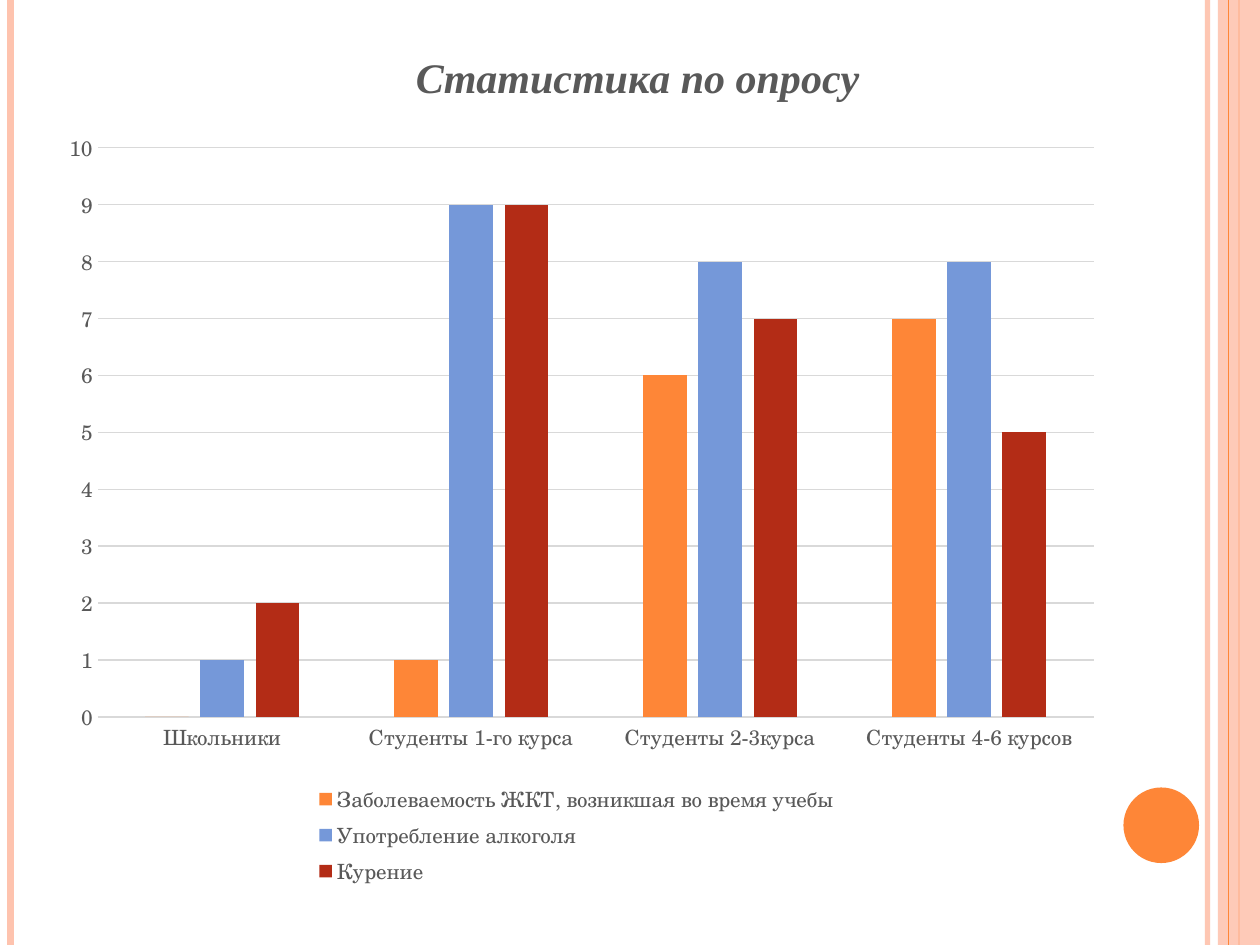
from lxml.etree import SubElement
from pptx import Presentation
from pptx.chart.data import CategoryChartData
from pptx.dml.color import RGBColor
from pptx.enum.chart import XL_CHART_TYPE, XL_LEGEND_POSITION, XL_TICK_MARK
from pptx.enum.shapes import MSO_CONNECTOR, MSO_SHAPE
from pptx.oxml.ns import qn
from pptx.util import Pt

ORANGE = RGBColor(0xFE, 0x86, 0x37)
PEACH = RGBColor(0xFE, 0xC3, 0xAE)
BLUE = RGBColor(0x75, 0x98, 0xD9)
RED = RGBColor(0xB3, 0x2C, 0x16)
GRAY = RGBColor(0x59, 0x59, 0x59)
GRID = RGBColor(0xD9, 0xD9, 0xD9)

WIDTH, HEIGHT = 720, 540
BODY_FONT = "TeX Gyre Schola"
TITLE_FONT = "Times New Roman"

GROUPS = ["Школьники", "Студенты 1-го курса", "Студенты 2-3курса", "Студенты 4-6 курсов"]
SURVEY = [
    ("Заболеваемость ЖКТ, возникшая во время учебы ", (0, 1, 6, 7), ORANGE),
    ("Употребление алкоголя", (1, 9, 8, 8), BLUE),
    ("Курение", (2, 9, 7, 5), RED),
]


def format_font(font, name=BODY_FONT, size=12, color=GRAY, bold=False, italic=False):
    font.name, font.size = name, Pt(size)
    font.bold, font.italic = bold, italic
    font.color.rgb = color


def write_text(frame, text, **font_format):
    run = frame.paragraphs[0].add_run()
    run.text = text
    format_font(run.font, **font_format)


def set_opacity(element, percent):
    color = next(element.iter(qn("a:srgbClr")))
    SubElement(color, qn("a:alpha"), val=str(percent * 1000))


def place_in_chart(parent, index, **fractions):
    """Set a manual layout, as fractions of the chart frame, at a child index."""
    for old in parent.findall(qn("c:layout")):
        parent.remove(old)
    layout = SubElement(parent, qn("c:layout"))
    parent.insert(index, layout)
    manual = SubElement(layout, qn("c:manualLayout"))
    if parent.tag == qn("c:plotArea"):
        SubElement(manual, qn("c:layoutTarget"), val="inner")
    for key in ("x", "y"):
        SubElement(manual, qn(f"c:{key}Mode"), val="edge")
    for key, value in fractions.items():
        SubElement(manual, qn(f"c:{key}"), val=str(value))


class SlideBuilder:
    def __init__(self, slide):
        self.slide = slide

    def stripe(self, x, weight, color, opacity=100):
        line = self.slide.shapes.add_connector(
            MSO_CONNECTOR.STRAIGHT, Pt(x), Pt(0), Pt(x), Pt(HEIGHT))
        line.line.color.rgb = color
        line.line.width = Pt(weight)
        properties = line._element.spPr
        SubElement(properties, qn("a:effectLst"))
        if opacity < 100:
            set_opacity(properties, opacity)

    def block(self, kind, left, top, width, height, color, opacity=100):
        shape = self.slide.shapes.add_shape(kind, Pt(left), Pt(top), Pt(width), Pt(height))
        shape.shadow.inherit = False
        shape.fill.solid()
        shape.fill.fore_color.rgb = color
        shape.line.fill.background()
        if opacity < 100:
            set_opacity(shape._element.spPr, opacity)

    def column_chart(self, left, top, width, height, title, groups, survey):
        data = CategoryChartData()
        data.categories = groups
        for name, values, _ in survey:
            data.add_series(name, values)
        chart = self.slide.shapes.add_chart(
            XL_CHART_TYPE.COLUMN_CLUSTERED, Pt(left), Pt(top), Pt(width), Pt(height), data).chart
        format_font(chart.font)

        # Title
        chart.has_title = True
        write_text(chart.chart_title.text_frame, title,
                   name=TITLE_FONT, size=24, bold=True, italic=True)
        place_in_chart(chart.chart_title._element, 1, x=0.34, y=0.03)

        # Columns
        plot = chart.plots[0]
        plot.gap_width, plot.overlap = 219, -27
        plot.vary_by_categories = False
        for series, (_, _, color) in zip(plot.series, survey):
            series.format.fill.solid()
            series.format.fill.fore_color.rgb = color
            series.invert_if_negative = False
        place_in_chart(chart._chartSpace.chart.plotArea, 0, x=0.05, y=0.15, w=0.93, h=0.65)

        # Axes
        for axis in (chart.category_axis, chart.value_axis):
            axis.major_tick_mark = axis.minor_tick_mark = XL_TICK_MARK.NONE
            format_font(axis.tick_labels.font)
        values = chart.value_axis
        values.minimum_scale, values.maximum_scale, values.major_unit = 0, 10, 1
        values.format.line.fill.background()
        values.has_major_gridlines = True
        for line in (chart.category_axis.format.line, values.major_gridlines.format.line):
            line.color.rgb = GRID
            line.width = Pt(0.75)

        # Legend
        chart.has_legend = True
        chart.legend.position = XL_LEGEND_POSITION.BOTTOM
        chart.legend.include_in_layout = False
        format_font(chart.legend.font)
        place_in_chart(chart.legend._element, 1, x=0.25, y=0.87, w=0.5, h=0.13)


def main():
    presentation = Presentation()
    presentation.slide_width, presentation.slide_height = Pt(WIDTH), Pt(HEIGHT)
    blank = presentation.slide_layouts[6]
    builder = SlideBuilder(presentation.slides.add_slide(blank))

    # Edge decoration
    builder.stripe(690, 3, PEACH, opacity=93)
    builder.stripe(6, 4.5, PEACH)
    builder.stripe(708, 1.5, ORANGE)
    builder.block(MSO_SHAPE.RECTANGLE, 696, 0, 24, HEIGHT, PEACH, opacity=87)
    builder.stripe(702, 0.75, ORANGE)
    builder.block(MSO_SHAPE.OVAL, 642, 450, 43.2, 43.2, ORANGE)

    # Survey results
    builder.column_chart(25.2, 9.4, 612, 500.4, "Статистика по опросу", GROUPS, SURVEY)

    presentation.save("out.pptx")


if __name__ == "__main__":
    main()
